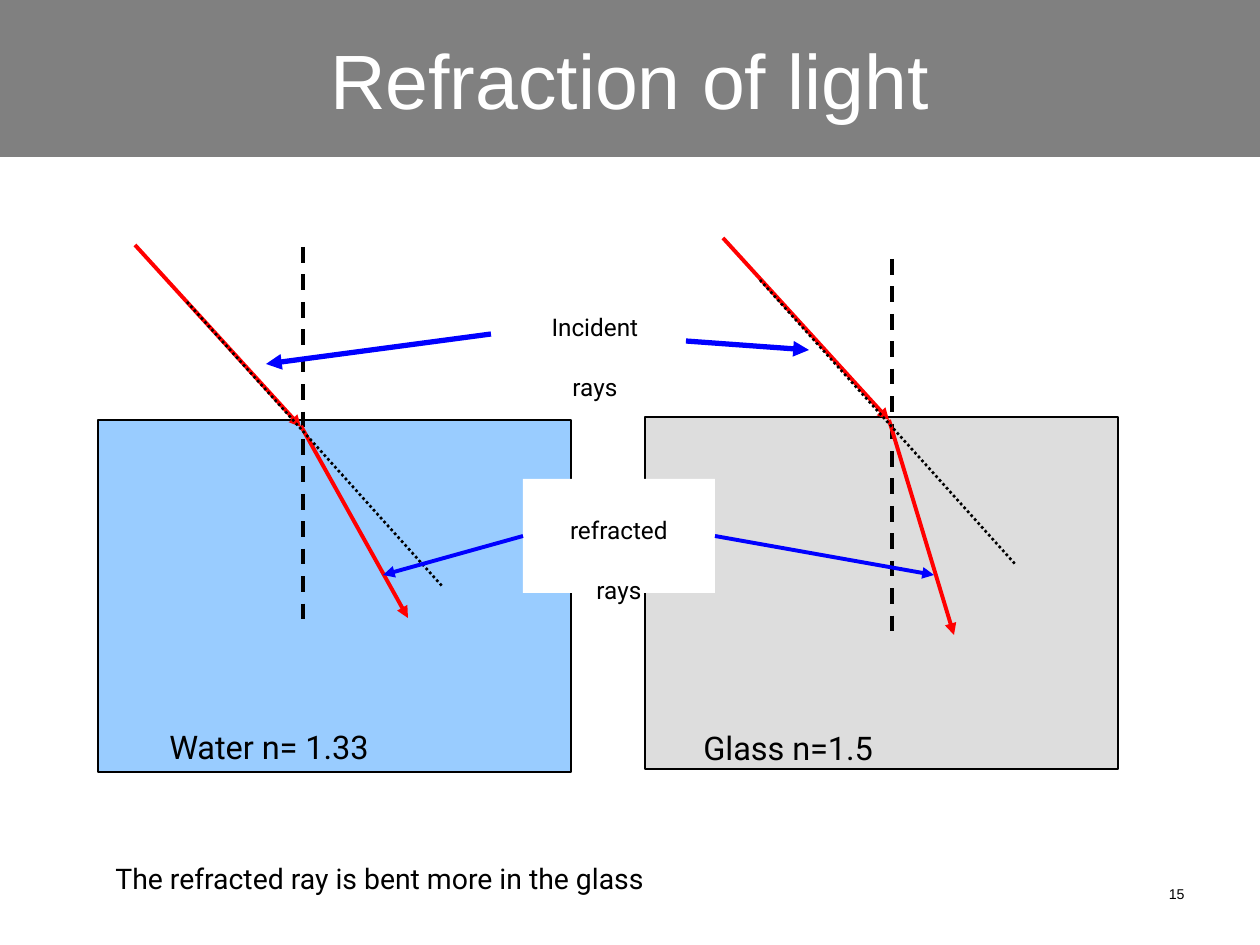
from lxml.etree import SubElement
from pptx import Presentation
from pptx.dml.color import RGBColor
from pptx.enum.dml import MSO_LINE
from pptx.enum.shapes import MSO_CONNECTOR, MSO_SHAPE
from pptx.enum.text import MSO_ANCHOR, MSO_AUTO_SIZE, PP_ALIGN
from pptx.oxml.ns import qn
from pptx.util import Pt

EMU_PER_PX = 914400 / 126
COLORS = {
    "band": "808080",
    "paper": "FFFFFF",
    "ink": "000000",
    "water": "99CCFF",
    "glass": "DDDDDD",
    "ray": "FF0000",
    "pointer": "0000FF",
}
LEFT_SIDE, RIGHT_SIDE = 1, 3


def px(length):
    return round(length * EMU_PER_PX)


def rgb(name):
    return RGBColor.from_string(COLORS[name])


def add_block(page, bounds, fill, outline=None):
    block = page.shapes.add_shape(MSO_SHAPE.RECTANGLE, *map(px, bounds))
    block.shadow.inherit = False
    block.fill.solid()
    block.fill.fore_color.rgb = rgb(fill)
    if outline:
        block.line.color.rgb = rgb(outline)
        block.line.width = Pt(0.75)
    else:
        block.line.fill.background()
    return block


def write(box, lines, size, font="Roboto", color="ink", align=PP_ALIGN.LEFT,
          lowered=True):
    frame = box.text_frame
    for index, line in enumerate(lines):
        para = frame.add_paragraph() if index else frame.paragraphs[0]
        para.alignment = align
        span = para.add_run()
        span.text = line
        span.font.size = Pt(size)
        span.font.name = font
        span.font.color.rgb = rgb(color)
        if lowered:  # subscript setting: smaller glyphs below the baseline
            span.font._element.set("baseline", "-30000")
    return frame


def fit_to_text(frame):
    frame.word_wrap = False
    frame.auto_size = MSO_AUTO_SIZE.SHAPE_TO_FIT_TEXT
    frame.vertical_anchor = MSO_ANCHOR.TOP


def add_label(page, bounds, lines, size, align=PP_ALIGN.LEFT):
    box = page.shapes.add_textbox(*map(px, bounds))
    fit_to_text(write(box, lines, size, align=align))


def add_line(page, start, end, color, width=2.25, dash=None, arrow=False):
    line = page.shapes.add_connector(
        MSO_CONNECTOR.STRAIGHT, *map(px, (*start, *end)))
    line.line.color.rgb = rgb(color)
    line.line.width = Pt(width)
    if dash:
        line.line.dash_style = dash
    if arrow:
        SubElement(line.line._get_or_add_ln(), qn("a:tailEnd"), type="triangle")
    SubElement(line._element.spPr, qn("a:effectLst"))
    return line


def add_normal(page, x, top):
    add_line(page, (x, top), (x, top + 379), "ink", dash=MSO_LINE.DASH)


def add_rays(page, source, surface, refracted_start, refracted_end, straight):
    add_line(page, source, surface, "ray", arrow=True)
    add_line(page, refracted_start, refracted_end, "ray", arrow=True)
    # Path the light would take without bending
    add_line(page, *straight, "ink", width=1.5, dash=MSO_LINE.ROUND_DOT)


def main():
    deck = Presentation()
    deck.slide_width, deck.slide_height = px(1260), px(945)
    page = deck.slides.add_slide(deck.slide_layouts[6])

    # Title band
    band = add_block(page, (0, 0, 1260, 157), "band")
    title = write(band, ["Refraction of light"], 44, "Arial", "paper",
                  PP_ALIGN.CENTER, lowered=False)
    title.vertical_anchor = MSO_ANCHOR.MIDDLE
    title.word_wrap = True

    # Water and glass, with the normals to their surfaces
    add_block(page, (98, 420, 473, 352), "water", "ink")
    add_block(page, (645, 417, 473, 352), "glass", "ink")
    add_normal(page, 303, 247)
    add_normal(page, 892, 259)

    # Light rays
    add_rays(page, (135, 245), (301, 427), (301, 426), (408, 618),
             ((187, 302), (442, 586)))
    add_rays(page, (723, 238), (889, 420), (889, 420), (954, 635),
             ((760, 280), (1015, 564)))

    # Labels
    add_label(page, (157, 680, 390, 80), ["Water n= 1.33"], 32)
    add_label(page, (691, 681, 322, 80), ["Glass n=1.5"], 32)
    add_label(page, (506, 276, 178, 114), ["Incident", "rays"], 24,
              PP_ALIGN.CENTER)
    refracted = add_block(page, (523, 479, 192, 114), "paper")
    fit_to_text(write(refracted, ["refracted", "rays"], 24,
                      align=PP_ALIGN.CENTER))

    # Pointers from the labels to the rays
    for start, end in (((491, 334), (266, 364)), ((686, 341), (809, 350))):
        add_line(page, start, end, "pointer", width=3, arrow=True)
    for side, start, end in ((RIGHT_SIDE, (715, 536), (934, 575)),
                             (LEFT_SIDE, (523, 536), (383, 575))):
        pointer = add_line(page, start, end, "pointer", arrow=True)
        pointer.begin_connect(refracted, side)

    # Conclusion and page number
    add_label(page, (103, 820, 949, 72),
              ["The refracted ray is bent more in the glass"], 28)
    number = page.shapes.add_textbox(*map(px, (903, 861, 294, 66)))
    write(number, ["15"], 14, "Arial", align=PP_ALIGN.RIGHT).word_wrap = True

    deck.save("out.pptx")


if __name__ == "__main__":
    main()
